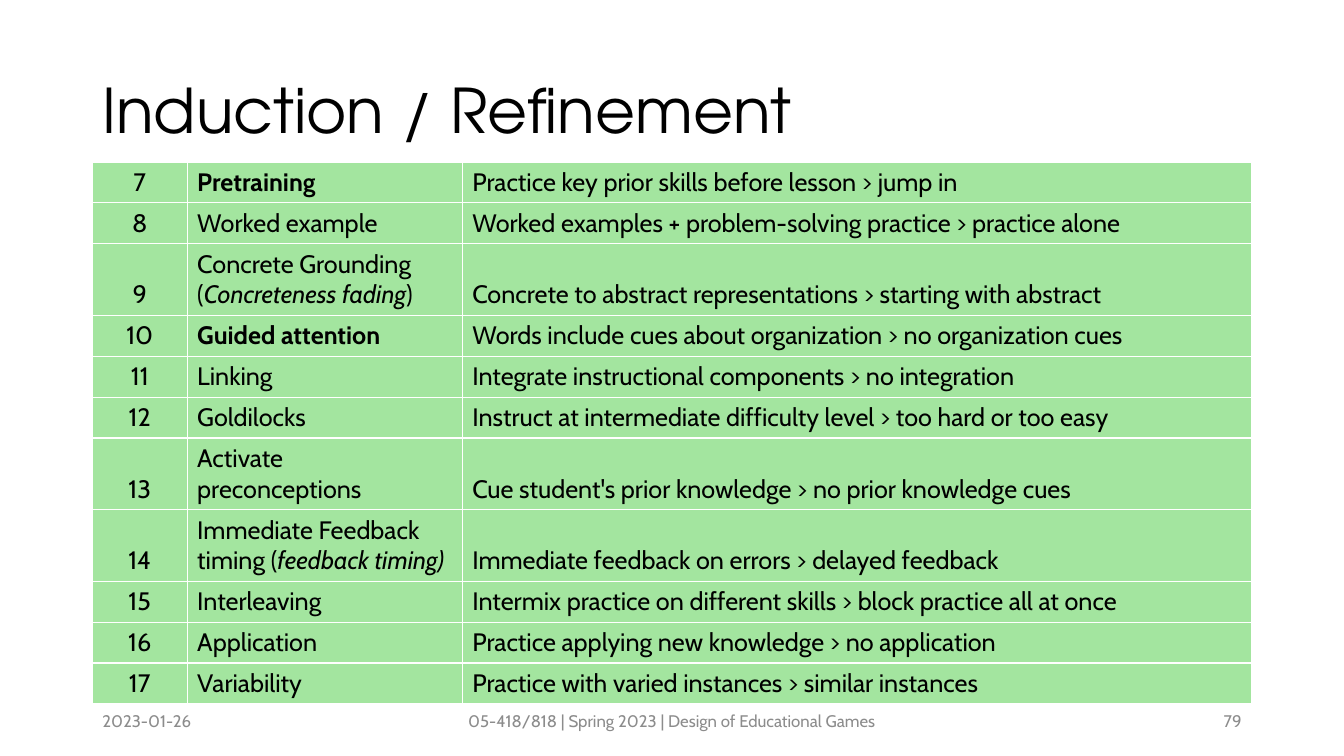
"""Build the Induction / Refinement slide with its table of instructional principles."""
from dataclasses import dataclass

import lxml.etree
import pptx
import pptx.dml.color
import pptx.enum.text
import pptx.oxml.ns
import pptx.util

Pt = pptx.util.Pt
Align = pptx.enum.text.PP_ALIGN
Anchor = pptx.enum.text.MSO_ANCHOR


@dataclass(frozen=True)
class Theme:
    title_font: str = "TeX Gyre Adventor"
    body_font: str = "Cabin"
    ink: str = "000000"
    muted: str = "8C8C8C"
    cell_fill: str = "A3E59F"
    border: str = "FFFFFF"
    title_size: int = 44
    table_size: int = 18
    footer_size: int = 12


LEFT, WIDTH = 66, 828
TABLE_TOP = 115.7
COLUMN_WIDTHS = (67.7, 196.5, 563.8)
SINGLE_ROW, DOUBLE_ROW = 29, 51
FOOTER_TOP, FOOTER_HEIGHT = 500.5, 28.75
FIRST_NUMBER = 7
BOLD_CONCEPTS = {"Pretraining", "Guided attention"}
TWO_LINE_NUMBERS = {9, 13, 14}
PRINCIPLES = [
    ("Pretraining", "Practice key prior skills before lesson > jump in"),
    ("Worked example", "Worked examples + problem-solving practice > practice alone"),
    ("Concrete Grounding\n(_Concreteness fading_)",
     "Concrete to abstract representations > starting with abstract"),
    ("Guided attention", "Words include cues about organization > no organization cues"),
    ("Linking", "Integrate instructional components > no integration"),
    ("Goldilocks", "Instruct at intermediate difficulty level > too hard or too easy"),
    ("Activate preconceptions", "Cue student's prior knowledge > no prior knowledge cues"),
    ("Immediate Feedback timing (_feedback timing)",
     "Immediate feedback on errors > delayed feedback"),
    ("Interleaving", "Intermix practice on different skills > block practice all at once"),
    ("Application", "Practice applying new knowledge > no application"),
    ("Variability", "Practice with varied instances > similar instances"),
]
FOOTERS = [
    (66, 216, "2023-01-26", Align.LEFT),
    (318, 324, "05-418/818 | Spring 2023 | Design of Educational Games", Align.CENTER),
    (678, 216, "79", Align.RIGHT),
]


class SlideBuilder:
    """Hold the theme and the current slide, and add styled elements to it."""

    def __init__(self, slide, theme):
        self.slide = slide
        self.theme = theme

    def style(self, span, font, size, color, bold=False, italic=False):
        span.font.name = font
        span.font.size = Pt(size)
        span.font.bold = bold
        span.font.italic = italic
        span.font.color.rgb = pptx.dml.color.RGBColor.from_string(color)

    def title(self, text):
        box = self.slide.shapes.title
        box.left, box.top, box.width, box.height = Pt(LEFT), Pt(28.75), Pt(WIDTH), Pt(104.4)
        frame = box.text_frame
        frame.text = text
        frame.auto_size = pptx.enum.text.MSO_AUTO_SIZE.NONE
        frame.vertical_anchor = Anchor.MIDDLE
        para = frame.paragraphs[0]
        para.alignment = Align.LEFT
        para.line_spacing = 0.9
        self.style(para.runs[0], self.theme.title_font, self.theme.title_size, self.theme.ink)

    def footer(self, left, width, text, alignment):
        box = self.slide.shapes.add_textbox(Pt(left), Pt(FOOTER_TOP), Pt(width), Pt(FOOTER_HEIGHT))
        frame = box.text_frame
        frame.word_wrap = True
        frame.vertical_anchor = Anchor.MIDDLE
        frame.text = text
        para = frame.paragraphs[0]
        para.alignment = alignment
        self.style(para.runs[0], self.theme.body_font, self.theme.footer_size, self.theme.muted)

    def borders(self, cell):
        properties = cell._tc.get_or_add_tcPr()
        for side in ("lnL", "lnR", "lnT", "lnB"):
            line = lxml.etree.SubElement(
                properties, pptx.oxml.ns.qn(f"a:{side}"), w=str(Pt(1)))
            fill = lxml.etree.SubElement(line, pptx.oxml.ns.qn("a:solidFill"))
            lxml.etree.SubElement(fill, pptx.oxml.ns.qn("a:srgbClr"), val=self.theme.border)

    def cell(self, cell, text, alignment):
        """Fill a cell; underscores in the text switch italics on and off."""
        self.borders(cell)
        cell.fill.solid()
        cell.fill.fore_color.rgb = pptx.dml.color.RGBColor.from_string(self.theme.cell_fill)
        cell.vertical_anchor = Anchor.BOTTOM
        frame = cell.text_frame
        frame.text = text
        for para in frame.paragraphs:
            para.alignment = alignment
            pieces = para.text.split("_")
            para.text = pieces[0]
            for piece in pieces[1:]:
                para.add_run().text = piece
            for index, span in enumerate(para.runs):
                self.style(span, self.theme.body_font, self.theme.table_size, self.theme.ink,
                           bold=text in BOLD_CONCEPTS, italic=index % 2 == 1)

    def table(self, principles):
        heights = [DOUBLE_ROW if number in TWO_LINE_NUMBERS else SINGLE_ROW
                   for number in range(FIRST_NUMBER, FIRST_NUMBER + len(principles))]
        table = self.slide.shapes.add_table(
            len(principles), len(COLUMN_WIDTHS),
            Pt(LEFT), Pt(TABLE_TOP), Pt(WIDTH), Pt(sum(heights))).table
        table.first_row = False
        table.horz_banding = False
        for column, width in zip(table.columns, COLUMN_WIDTHS):
            column.width = Pt(width)
        for index, (concept, claim) in enumerate(principles):
            table.rows[index].height = Pt(heights[index])
            self.cell(table.cell(index, 0), str(FIRST_NUMBER + index), Align.CENTER)
            self.cell(table.cell(index, 1), concept, Align.LEFT)
            self.cell(table.cell(index, 2), claim, Align.LEFT)


def main():
    deck = pptx.Presentation()
    deck.slide_width, deck.slide_height = Pt(960), Pt(540)
    page = SlideBuilder(deck.slides.add_slide(deck.slide_layouts[5]), Theme())
    page.title("Induction / Refinement")
    page.table(PRINCIPLES)
    for footer in FOOTERS:
        page.footer(*footer)
    deck.save("out.pptx")


if __name__ == "__main__":
    main()
